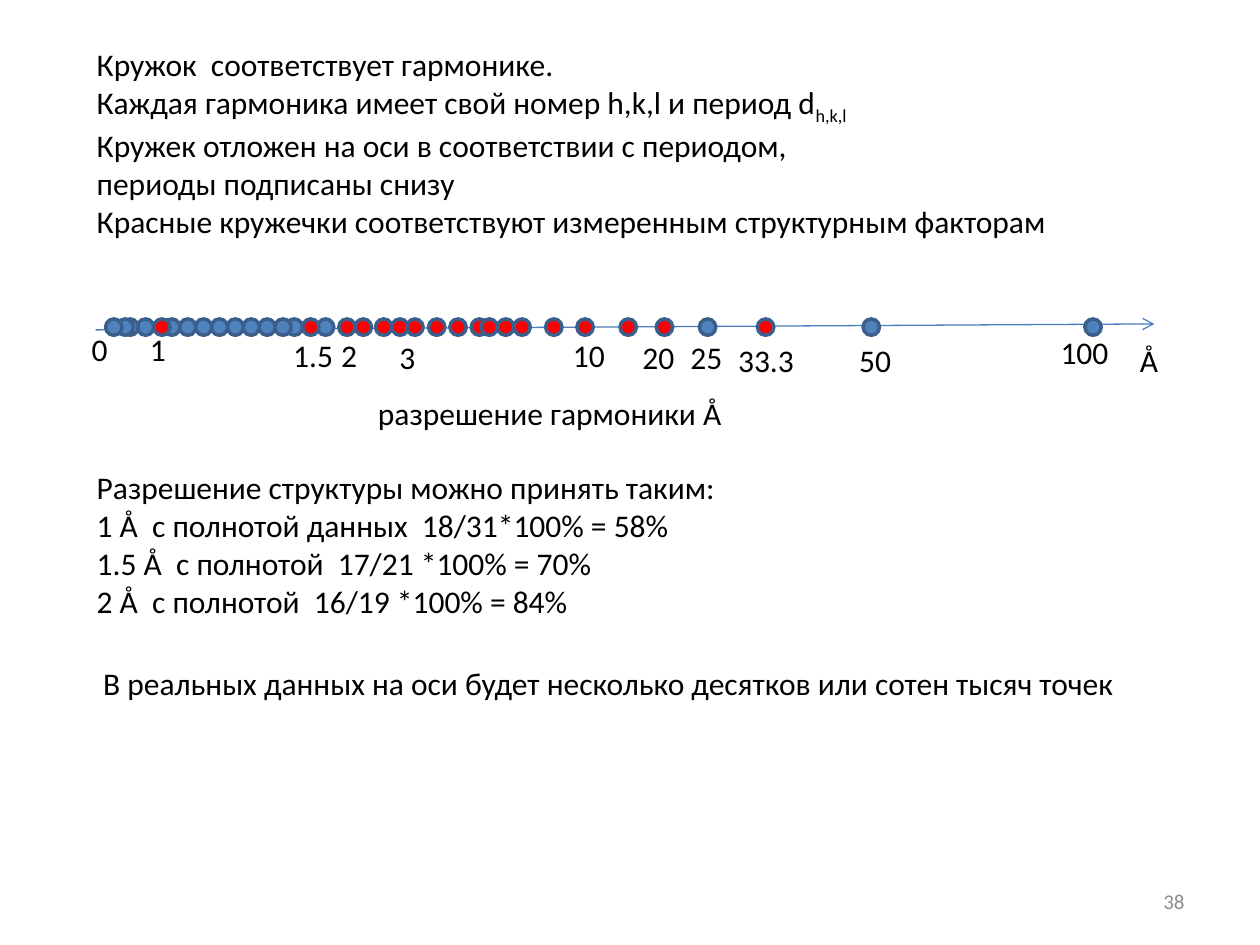
from pptx import Presentation
from pptx.dml.color import RGBColor
from pptx.enum.shapes import MSO_CONNECTOR, MSO_SHAPE
from pptx.enum.text import MSO_ANCHOR, MSO_AUTO_SIZE, PP_ALIGN
from pptx.oxml.ns import qn
from pptx.util import Cm, Pt
from lxml import etree

STRAIGHT, OVAL = MSO_CONNECTOR.STRAIGHT, MSO_SHAPE.OVAL
LEFT, RIGHT = PP_ALIGN.LEFT, PP_ALIGN.RIGHT
TOP, MIDDLE = MSO_ANCHOR.TOP, MSO_ANCHOR.MIDDLE
GROW = MSO_AUTO_SIZE.SHAPE_TO_FIT_TEXT

BLACK = RGBColor(0x00, 0x00, 0x00)
GRAY = RGBColor(0x8C, 0x8C, 0x8C)
BLUE = RGBColor(0x4F, 0x81, 0xBD)
RED = RGBColor(0xFF, 0x00, 0x00)
AXIS_BLUE = RGBColor(0x4B, 0x7E, 0xBC)
OUTLINE_BLUE = RGBColor(0x3A, 0x5F, 0x8C)

# All lengths in centimetres. "\n" breaks a line, "_" starts a subscript.
INTRO = [
    "Кружок  соответствует гармонике.\n"
    "Каждая гармоника имеет свой номер h,k,l и период d_h,k,l",
    "Кружек отложен на оси в соответствии с периодом,",
    "периоды подписаны снизу\n"
    "Красные кружечки соответствуют измеренным структурным факторам",
]
RESOLUTIONS = [
    "Разрешение структуры можно принять таким:",
    "1 Å  с полнотой данных  18/31*100% = 58%",
    "1.5 Å  с полнотой  17/21 *100% = 70%",
    "2 Å  с полнотой  16/19 *100% = 84%",
]
REMARK = ["В реальных данных на оси будет несколько десятков или сотен тысяч точек"]

AXIS = (1.93, 6.65, 23.27, 6.53)
CIRCLE_TOP, CIRCLE_SIZE = 6.43, 0.33
EVEN_CIRCLES = [5.54 - 0.32 * step for step in range(8)]
UNMEASURED = [21.87, 17.4, 14.1, 6.4, 5.77, *EVEN_CIRCLES, 2.77, 2.46, 2.36, 2.13]
MEASURED = [3.1, 6.1, 6.83, 7.16, 7.57, 7.9, 8.2, 8.64, 9.07, 9.5, 9.7, 10.03,
            10.36, 11, 11.63, 12.5, 13.23, 15.27]

LINE_HEIGHT = 1.02
AXIS_LABELS = [  # text, left, top, width
    ("0", 1.6, 6.53, 1.6),
    ("1", 2.77, 6.53, 0.86),
    ("1.5", 5.66, 6.65, 1.5),
    ("2", 6.63, 6.65, 0.86),
    ("3", 7.8, 6.68, 0.86),
    ("10", 11.3, 6.65, 1.17),
    ("20", 12.7, 6.68, 1.6),
    ("25", 13.67, 6.68, 1.6),
    ("33.3", 14.63, 6.76, 1.8),
    ("50", 17.07, 6.76, 1.17),
    ("100", 21.13, 6.58, 1.6),
    ("Å", 22.73, 6.76, 0.89),
]


def add_text(shapes, paragraphs, box, size=18, color=BLACK, align=LEFT,
             anchor=TOP, wrap=False):
    text_box = shapes.add_textbox(*map(Cm, box))
    frame = text_box.text_frame
    frame.word_wrap = wrap
    frame.auto_size = GROW
    frame.vertical_anchor = anchor
    for index, text in enumerate(paragraphs):
        paragraph = frame.add_paragraph() if index else frame.paragraphs[0]
        paragraph.alignment = align
        for line_index, line in enumerate(text.split("\n")):
            if line_index:
                paragraph.add_line_break()
            for is_subscript, part in enumerate(line.split("_")):
                run = paragraph.add_run()
                run.text = part
                run.font.name = "Calibri"
                run.font.size = Pt(size)
                run.font.color.rgb = color
                if is_subscript:
                    run._r.get_or_add_rPr().set("baseline", "-25000")


def add_axis(shapes):
    axis = shapes.add_connector(STRAIGHT, *map(Cm, AXIS))
    axis.line.color.rgb = AXIS_BLUE
    axis.line.width = Pt(0.75)
    etree.SubElement(axis.line._get_or_add_ln(), qn("a:tailEnd"), type="arrow")
    etree.SubElement(axis._element.spPr, qn("a:effectLst"))


def add_circle(shapes, left, color):
    circle = shapes.add_shape(OVAL, Cm(left), Cm(CIRCLE_TOP),
                              Cm(CIRCLE_SIZE), Cm(CIRCLE_SIZE))
    circle.shadow.inherit = False
    circle.fill.solid()
    circle.fill.fore_color.rgb = color
    circle.line.color.rgb = OUTLINE_BLUE
    circle.line.width = Pt(2)


def main():
    presentation = Presentation()
    presentation.slide_width, presentation.slide_height = Cm(25.4), Cm(19.05)
    slide = presentation.slides.add_slide(presentation.slide_layouts[6])

    add_text(slide.shapes, ["38"], (18.21, 17.65, 5.92, LINE_HEIGHT), size=12,
             color=GRAY, align=RIGHT, anchor=MIDDLE, wrap=True)

    diagram = slide.shapes.add_group_shape().shapes
    add_axis(diagram)
    for lefts, color in ((UNMEASURED, BLUE), (MEASURED, RED)):
        for left in lefts:
            add_circle(diagram, left, color)
    for text, left, top, width in AXIS_LABELS:
        add_text(diagram, [text], (left, top, width, LINE_HEIGHT), wrap=True)
    add_text(diagram, ["разрешение гармоники Å"], (7.37, 7.82, 7.52, LINE_HEIGHT))

    add_text(slide.shapes, INTRO, (1.7, 0.79, 19.86, 4.11))
    add_text(slide.shapes, RESOLUTIONS, (1.7, 9.32, 13.13, 3.33))
    add_text(slide.shapes, REMARK, (1.83, 13.26, 21.13, LINE_HEIGHT))
    presentation.save("out.pptx")


if __name__ == "__main__":
    main()
